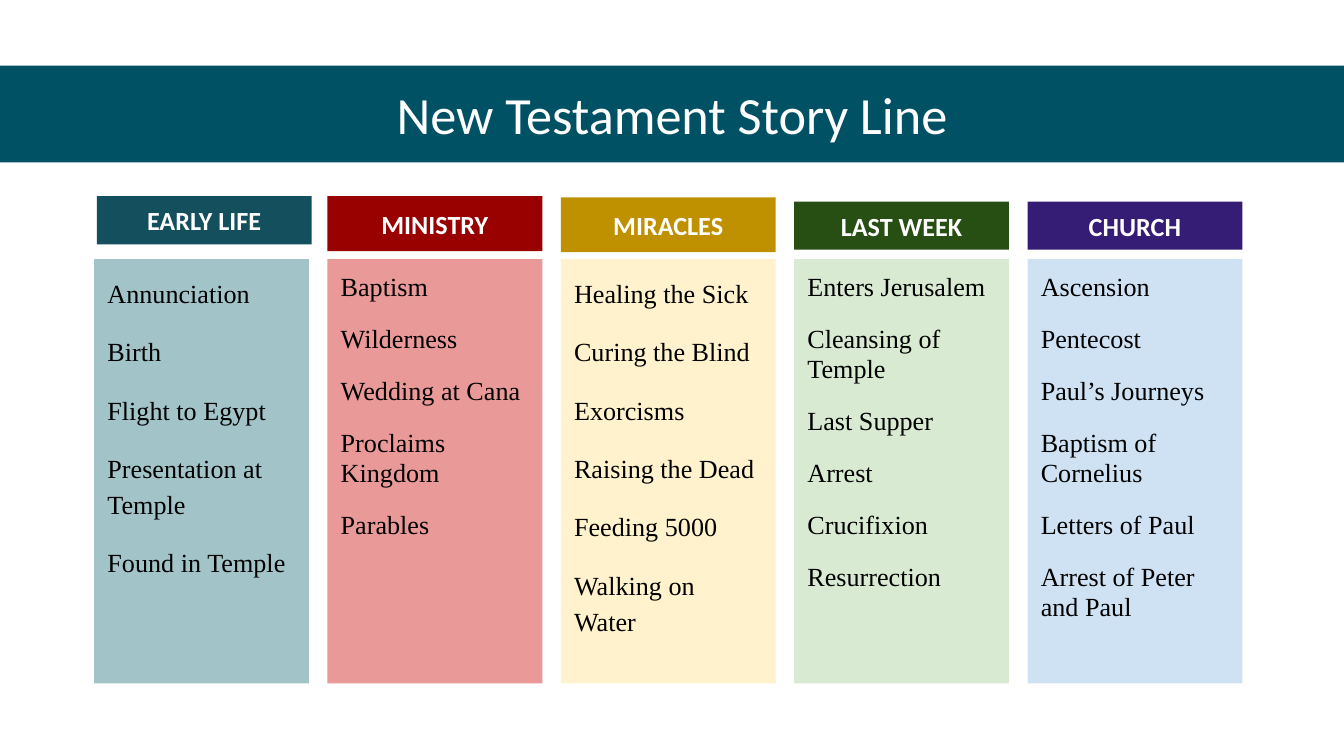
from dataclasses import dataclass

from lxml import etree
from pptx import Presentation
from pptx.dml import color
from pptx.enum import shapes, text
from pptx.oxml import ns
from pptx.util import Cm, Pt


@dataclass(frozen=True)
class Theme:
    banner: str = "005164"
    light: str = "FFFFFF"
    dark: str = "000000"
    heading_font: str = "Calibri"
    body_font: str = "Times New Roman"
    title_size: int = 28
    column_size: int = 14
    early: tuple = ("134F5C", "A2C4C9")
    ministry: tuple = ("990000", "EA9999")
    miracles: tuple = ("BF9000", "FFF2CC")
    last_week: tuple = ("274E13", "D9EAD3")
    church: tuple = ("351C75", "CFE2F3")


@dataclass(frozen=True)
class Box:
    left: float
    top: float
    width: float
    height: float


@dataclass(frozen=True)
class Period:
    name: str
    colors: tuple
    events: tuple
    line_spacing: float
    header_shift: float
    header_drop: float
    header_height: float


THEME = Theme()
COLUMN_PITCH = 4.41
COLUMN_WIDTH = 4.06
EVENTS_DROP = 1.19

PERIODS = (
    Period("EARLY LIFE", THEME.early,
           ("Annunciation", "Birth", "Flight to Egypt",
            "Presentation at Temple", "Found in Temple"),
           1.15, 0.05, 0, 0.91),
    Period("MINISTRY", THEME.ministry,
           ("Baptism", "Wilderness", "Wedding at Cana",
            "Proclaims Kingdom", "Parables"),
           0.95, 0, 0, 1.04),
    Period("MIRACLES", THEME.miracles,
           ("Healing the Sick", "Curing the Blind", "Exorcisms",
            "Raising the Dead", "Feeding 5000", "Walking on Water"),
           1.15, 0, 0.02, 1.04),
    Period("LAST WEEK", THEME.last_week,
           ("Enters Jerusalem", "Cleansing of Temple", "Last Supper",
            "Arrest", "Crucifixion", "Resurrection"),
           0.95, 0, 0.1, 0.91),
    Period("CHURCH", THEME.church,
           ("Ascension", "Pentecost", "Paul’s Journeys",
            "Baptism of Cornelius", "Letters of Paul",
            "Arrest of Peter and Paul"),
           0.95, 0, 0.1, 0.91),
)


def place(panel, box, fill):
    panel.left, panel.top = Cm(box.left), Cm(box.top)
    panel.width, panel.height = Cm(box.width), Cm(box.height)
    panel.fill.solid()
    panel.fill.fore_color.rgb = color.RGBColor.from_string(fill)
    panel.line.fill.background()


def add_panel(slide):
    panel = slide.shapes.add_shape(shapes.MSO_SHAPE.RECTANGLE, 0, 0, 0, 0)
    panel.shadow.inherit = False
    return panel


def write(panel, words, font, size, ink, bold=False, anchor=text.MSO_ANCHOR.MIDDLE,
          align=text.PP_ALIGN.CENTER):
    frame = panel.text_frame
    frame.text = words
    frame.word_wrap = True
    frame.auto_size = text.MSO_AUTO_SIZE.NONE
    frame.vertical_anchor = anchor
    frame.margin_left = frame.margin_right = Cm(0.25)
    frame.margin_top = frame.margin_bottom = Cm(0.25)
    for paragraph in frame.paragraphs:
        paragraph.alignment = align
        for run in paragraph.runs:
            run.font.name = font
            run.font.size = Pt(size)
            run.font.bold = bold
            run.font.color.rgb = color.RGBColor.from_string(ink)


def fill_banner(title, box):
    place(title, box, THEME.banner)
    write(title, "New Testament Story Line", THEME.heading_font,
          THEME.title_size, THEME.light)


def fill_events(events, box, period):
    place(events, box, period.colors[1])
    write(events, "\n".join(period.events), THEME.body_font, THEME.column_size,
          THEME.dark, anchor=text.MSO_ANCHOR.TOP, align=text.PP_ALIGN.LEFT)
    for index, paragraph in enumerate(events.text_frame.paragraphs):
        properties = paragraph._p.get_or_add_pPr()
        properties.set("marL", "0")
        properties.set("indent", "0")
        etree.SubElement(properties, ns.qn("a:buNone"))
        paragraph.line_spacing = period.line_spacing
        paragraph.space_before = Pt(12 if index else 0)
        paragraph.space_after = Pt(0)


def build_column(slide, box, period, events):
    fill_events(events, Box(box.left, box.top + EVENTS_DROP, box.width,
                            box.height - EVENTS_DROP), period)
    header = add_panel(slide)
    place(header, Box(box.left + period.header_shift, box.top + period.header_drop,
                      box.width, period.header_height), period.colors[0])
    write(header, period.name, THEME.heading_font, THEME.column_size,
          THEME.light, bold=True)


def build_story_line(slide, box):
    fill_banner(slide.shapes.title, Box(box.left, box.top + 1.24, box.width, 1.83))
    for index, period in enumerate(PERIODS):
        events = add_panel(slide) if index else slide.placeholders[1]
        column = Box(box.left + 1.78 + index * COLUMN_PITCH, box.top + 3.71,
                     COLUMN_WIDTH, 9.21)
        build_column(slide, column, period, events)


def main():
    deck = Presentation()
    page = Box(0, 0, 25.4, 14.29)
    deck.slide_width, deck.slide_height = Cm(page.width), Cm(page.height)
    build_story_line(deck.slides.add_slide(deck.slide_layouts[1]), page)
    deck.save("out.pptx")


if __name__ == "__main__":
    main()
